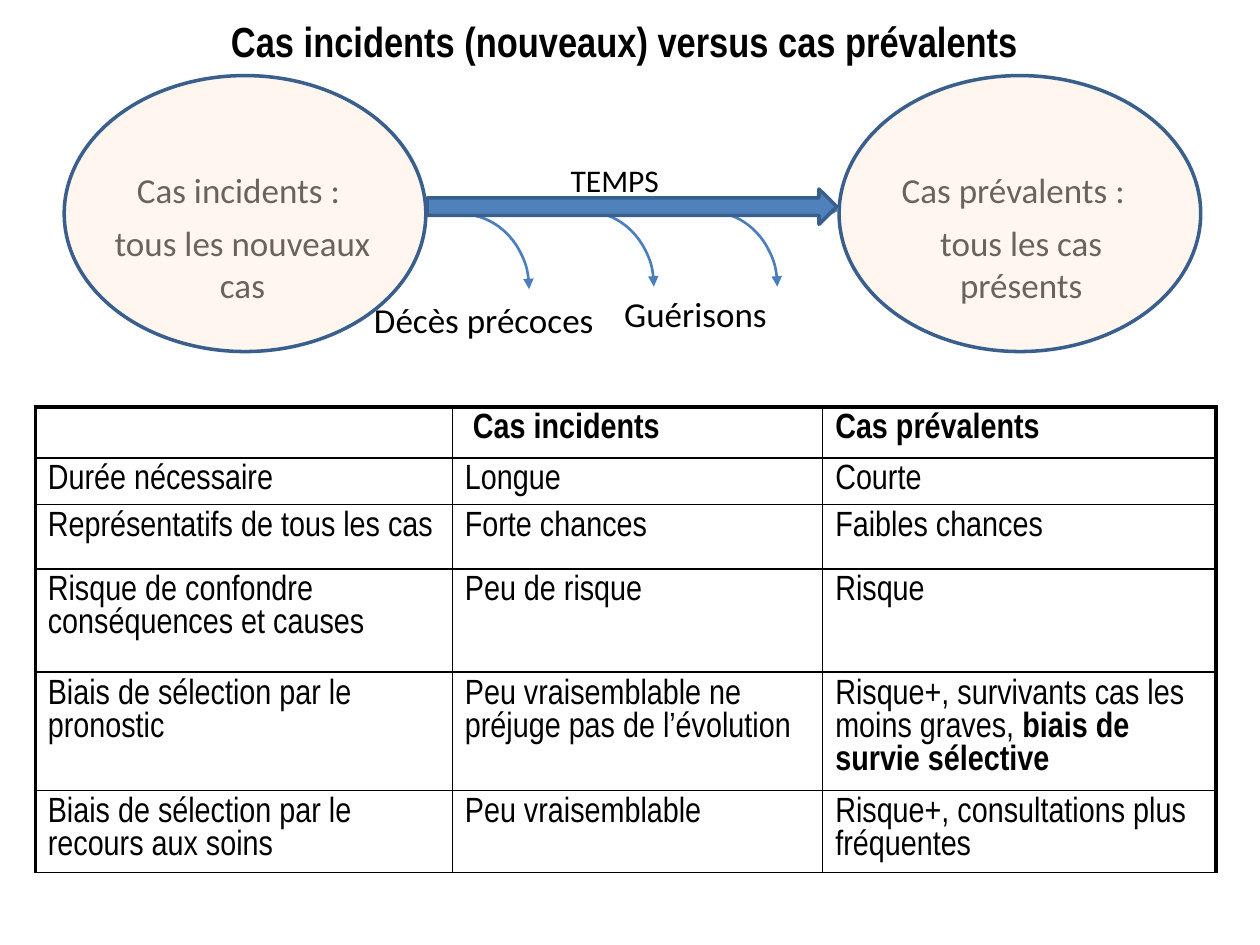
import pptx
import pptx.util
import pptx.dml.color
import pptx.enum.shapes
import pptx.enum.text
import pptx.oxml
import pptx.oxml.ns
from lxml import etree

SHAPES = pptx.enum.shapes.MSO_SHAPE
ALIGN = pptx.enum.text.PP_ALIGN
ANCHOR = pptx.enum.text.MSO_ANCHOR

# Content: places are (left, top, width, height) on a grid of 100 columns by 75 rows
COLUMNS, ROWS = 100, 75
COLORS = {"text": "000000", "paper": "FFFFFF", "oval": "FDEADA",
          "outline": "3A5F8C", "line": "4B7EBC", "arrow": "4F81BD"}
TITLE = "Cas incidents (nouveaux) versus cas prévalents"
LABELS = [
    # paragraphs, place, size, centred, wrapped
    (["Décès précoces"], (28.7, 23.2, 20, 4.4), 20, False, True),
    (["Guérisons"], (47.8, 22.7, 14.8, 3.9), 20, True, True),
    (["TEMPS"], (44.3, 12.3, 10.9, 4.5), 18, False, False),
    (["Cas prévalents :  ", "tous les cas présents"], (69, 12.9, 24.1, 10.7), 20, True, True),
    (["Cas incidents : ", "tous les nouveaux cas"], (6.6, 12.9, 25.3, 10.7), 20, True, True),
]
OVALS = [(5.1, 6, 28.7, 21.9), (66.6, 6, 28.7, 21.9)]
TIME_LINE = (33.8, 17, 66.6, 16.7)
TIME_ARROW = (33.9, 15, 32.5, 2.8)
EXIT_ARCS = [(31.3, 17), (41.2, 16.8), (51, 16.8)]
ARC_SIZE = (10.7, 11.9)
TABLE_CORNER = (2.8, 32.3)
COLUMN_WIDTHS = [33.1, 29.4, 31.2]
ROW_HEIGHTS = [3.7, 3.7, 5.1, 8.2, 9.4, 6.5]
TABLE = [
    ["", " Cas incidents", "Cas prévalents"],
    ["Durée nécessaire", "Longue", "Courte"],
    ["Représentatifs de tous les cas", "Forte chances", "Faibles chances"],
    ["Risque de confondre conséquences et causes", "Peu de risque", "Risque"],
    ["Biais de sélection par le pronostic",
     "Peu vraisemblable ne préjuge pas de l’évolution",
     "Risque+, survivants cas les moins graves, "],
    ["Biais de sélection par le recours aux soins", "Peu vraisemblable",
     "Risque+, consultations plus fréquentes"],
]
BOLD_ENDINGS = {(4, 2): "biais de survie sélective"}

presentation = pptx.Presentation()
presentation.slide_width = pptx.util.Inches(10)
presentation.slide_height = pptx.util.Inches(7.5)
slide = presentation.slides.add_slide(presentation.slide_layouts[6])


def across(columns):
    return round(presentation.slide_width * columns / COLUMNS)


def down(rows):
    return round(presentation.slide_height * rows / ROWS)


def place(left, top, width, height):
    return across(left), down(top), across(width), down(height)


def color(name):
    return pptx.dml.color.RGBColor.from_string(COLORS[name])


def add_element(parent, tag, **attributes):
    element = etree.SubElement(parent, pptx.oxml.ns.qn(tag))
    for name, value in attributes.items():
        element.set(name, str(value))
    return element


def format_run(run, size, font_name, bold=False):
    run.font.size = pptx.util.Pt(size)
    run.font.name = font_name
    run.font.bold = bold
    run.font.color.rgb = color("text")


def add_text(paragraphs, box, size, centred, wrapped, font_name="Calibri", bold=False):
    text_frame = slide.shapes.add_textbox(*place(*box)).text_frame
    text_frame.word_wrap = wrapped
    text_frame.text = "\n".join(paragraphs)
    for index, paragraph in enumerate(text_frame.paragraphs):
        paragraph.alignment = ALIGN.CENTER if centred else ALIGN.LEFT
        if index:
            paragraph.space_before = pptx.util.Pt(0.3 * size)
        format_run(paragraph.runs[0], size, font_name, bold)
    return text_frame


def add_shape(kind, box, line, width, fill=None):
    shape = slide.shapes.add_shape(kind, *place(*box))
    shape.shadow.inherit = False
    shape.line.color.rgb = color(line)
    shape.line.width = pptx.util.Pt(width)
    if fill:
        shape.fill.solid()
        shape.fill.fore_color.rgb = color(fill)
    else:
        shape.fill.background()
    return shape


def add_arrowhead(shape):
    add_element(shape.line._get_or_add_ln(), "a:tailEnd", type="triangle")


def set_borders(cell, widths):
    properties = cell._tc.get_or_add_tcPr()
    for index, (side, width) in enumerate(widths.items()):
        border = etree.Element(pptx.oxml.ns.qn(f"a:ln{side}"), w=str(pptx.util.Pt(width)))
        add_element(add_element(border, "a:solidFill"), "a:srgbClr", val=COLORS["text"])
        properties.insert(index, border)


# Comparison table
table = slide.shapes.add_table(
    len(ROW_HEIGHTS), len(COLUMN_WIDTHS),
    *place(*TABLE_CORNER, sum(COLUMN_WIDTHS), sum(ROW_HEIGHTS))).table
for column, width in zip(table.columns, COLUMN_WIDTHS):
    column.width = across(width)
for row, height in zip(table.rows, ROW_HEIGHTS):
    row.height = down(height)
for row_index, texts in enumerate(TABLE):
    for column_index, text in enumerate(texts):
        cell = table.cell(row_index, column_index)
        cell.fill.solid()
        cell.fill.fore_color.rgb = color("paper")
        set_borders(cell, {"L": 2.25 if column_index == 0 else 1,
                           "R": 2.25 if column_index == len(texts) - 1 else 1,
                           "T": 2.25 if row_index == 0 else 1,
                           "B": 1})
        if text:
            cell.text_frame.text = text
            paragraph = cell.text_frame.paragraphs[0]
            format_run(paragraph.runs[0], 20, "Arial Narrow", row_index == 0)
            if (row_index, column_index) in BOLD_ENDINGS:
                ending = paragraph.add_run()
                ending.text = BOLD_ENDINGS[row_index, column_index]
                format_run(ending, 20, "Arial Narrow", True)

# Title and labels
title = add_text([TITLE], (3.5, -1.9, 92.1, 10.2), 24, True, True, "Arial Narrow", True)
title.vertical_anchor = ANCHOR.MIDDLE
for label in LABELS:
    add_text(*label)

# Translucent ovals over their labels
for box in OVALS:
    oval = add_shape(SHAPES.OVAL, box, "outline", 2, "oval")
    tint = oval.fill._xPr.find(".//" + pptx.oxml.ns.qn("a:srgbClr"))
    add_element(tint, "a:alpha", val=42000)

# Time line, exits and time arrow
start_x, start_y, end_x, end_y = TIME_LINE
connector = slide.shapes.add_connector(
    pptx.enum.shapes.MSO_CONNECTOR.STRAIGHT,
    across(start_x), down(start_y), across(end_x), down(end_y))
connector.line.color.rgb = color("line")
connector.line.width = pptx.util.Pt(2)
add_arrowhead(connector)
add_element(connector._element.spPr, "a:effectLst")

for corner in EXIT_ARCS:
    add_arrowhead(add_shape(SHAPES.ARC, (*corner, *ARC_SIZE), "line", 1.5))
add_shape(SHAPES.RIGHT_ARROW, TIME_ARROW, "outline", 2, "arrow")

presentation.save("out.pptx")
